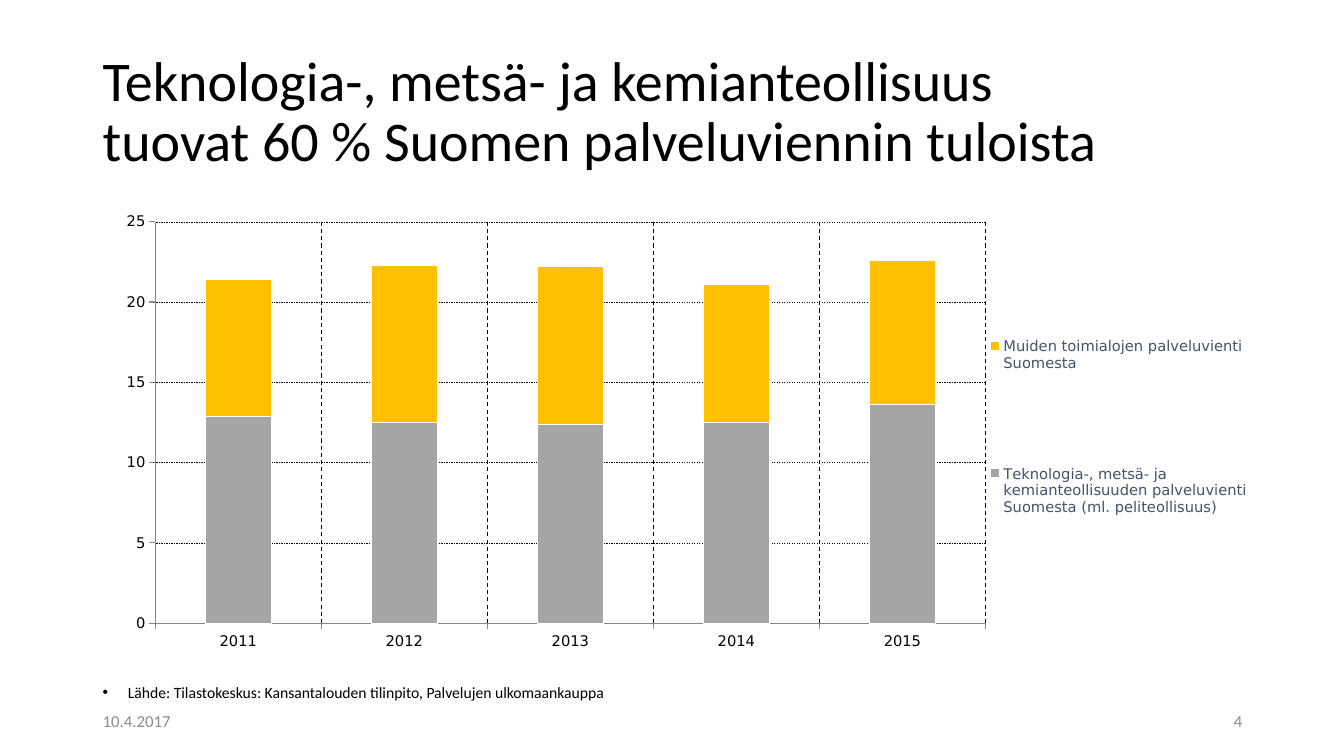
from dataclasses import dataclass

from lxml.etree import SubElement
from pptx import Presentation
from pptx.chart.data import CategoryChartData
from pptx.dml.color import RGBColor
from pptx.enum.chart import XL_CHART_TYPE as ChartType, XL_LEGEND_POSITION as LegendPos
from pptx.enum.chart import XL_TICK_MARK as Tick
from pptx.enum.dml import MSO_LINE
from pptx.enum.text import MSO_ANCHOR as Anchor, PP_ALIGN as Align
from pptx.oxml import parse_xml
from pptx.oxml.ns import nsdecls, qn
from pptx.util import Inches, Pt

TITLE = ["Teknologia-, metsä- ja kemianteollisuus",
         "tuovat 60 % Suomen palveluviennin tuloista"]
YEARS = ["2011", "2012", "2013", "2014", "2015"]
SERIES = [
    ("Teknologia-, metsä- ja kemianteollisuuden palveluvienti Suomesta (ml. peliteollisuus)",
     (12.9, 12.5, 12.4, 12.5, 13.6), "A5A5A5"),
    ("Muiden toimialojen palveluvienti Suomesta",
     (8.5, 9.8, 9.8, 8.6, 9), "FFC000"),
]
SOURCE = "Lähde: Tilastokeskus: Kansantalouden tilinpito, Palvelujen ulkomaankauppa"
DATE = "10.4.2017"
PAGE = "4"

# Fractions of the chart frame: left, top, width, height
PLOT_AREA = (0.054, 0.042, 0.716, 0.837)
LEGEND_AREA = (0.77, 0.09, 0.23, 0.76)

LEFT, WIDTH = 0.92, 11.5
FOOTER_TOP, FOOTER_W, FOOTER_H = 6.95, 3, 0.4


@dataclass(frozen=True)
class Theme:
    font: str = "Calibri"
    chart_font: str = "DejaVu Sans"
    text: str = "000000"
    footer: str = "8C8C8C"
    legend: str = "44546A"
    axis: str = "868686"
    bar_edge: str = "FFFFFF"
    title_pt: float = 40
    chart_pt: float = 10.5
    source_pt: float = 11.2
    footer_pt: float = 12


THEME = Theme()


def set_font(font, name, size, color):
    font.name = name
    font.size = Pt(size)
    font.color.rgb = RGBColor.from_string(color)


def add_text(slide, box, lines, size, color=THEME.text, anchor=Anchor.MIDDLE,
             align=Align.LEFT, spacing=1.0):
    """Add a one-paragraph text box whose lines are parted by line breaks."""
    tf = slide.shapes.add_textbox(*map(Inches, box)).text_frame
    tf.word_wrap = True
    tf.vertical_anchor = anchor
    p = tf.paragraphs[0]
    for i, line in enumerate(lines):
        if i:
            p.add_line_break()
        p.add_run().text = line
    p.alignment = align
    p.line_spacing = spacing
    set_font(p.font, THEME.font, size, color)
    return p


def add_bullet(p, indent):
    pPr = p._p.get_or_add_pPr()
    pPr.set("marL", str(Inches(indent)))
    pPr.set("indent", str(-Inches(indent)))
    bullet_font = parse_xml(f'<a:buFont {nsdecls("a")} typeface="Arial"/>')
    bullet = parse_xml(f'<a:buChar {nsdecls("a")} char="•"/>')
    at = 1 if pPr.find(qn("a:lnSpc")) is not None else 0
    pPr.insert(at, bullet_font)
    pPr.insert(at + 1, bullet)


def place(parent, index, area, inner=False):
    """Give a plot area or legend a fixed place within the chart frame."""
    for old in parent.findall(qn("c:layout")):
        parent.remove(old)
    layout = parse_xml(f'<c:layout {nsdecls("c")}/>')
    manual = SubElement(layout, qn("c:manualLayout"))
    settings = [("layoutTarget", "inner")] if inner else []
    settings += [("xMode", "edge"), ("yMode", "edge")]
    settings += zip("xywh", area)
    for tag, value in settings:
        SubElement(manual, qn(f"c:{tag}")).set("val", str(value))
    parent.insert(index, layout)


def style_axis(axis, grid_pt):
    axis.major_tick_mark = Tick.OUTSIDE
    axis.minor_tick_mark = Tick.NONE
    axis.has_major_gridlines = True
    grid = axis.major_gridlines.format.line
    grid.color.rgb = RGBColor.from_string(THEME.text)
    grid.width = Pt(grid_pt)
    grid.dash_style = MSO_LINE.DASH
    axis.format.line.color.rgb = RGBColor.from_string(THEME.axis)
    axis.format.line.width = Pt(0.75)
    set_font(axis.tick_labels.font, THEME.chart_font, THEME.chart_pt, THEME.text)


def add_service_export_chart(slide, box):
    data = CategoryChartData()
    data.categories = YEARS
    for name, values, _ in SERIES:
        data.add_series(name, values)
    chart = slide.shapes.add_chart(
        ChartType.COLUMN_STACKED, *map(Inches, box), data).chart
    chart.has_title = False
    set_font(chart.font, THEME.chart_font, THEME.chart_pt, THEME.text)

    plot = chart.plots[0]
    plot.gap_width, plot.overlap = 150, 100
    plot.vary_by_categories = False
    for s, (_, _, color) in zip(plot.series, SERIES):
        s.format.fill.solid()
        s.format.fill.fore_color.rgb = RGBColor.from_string(color)
        s.format.line.color.rgb = RGBColor.from_string(THEME.bar_edge)
        s.format.line.width = Pt(0.75)

    style_axis(chart.category_axis, 0.75)
    style_axis(chart.value_axis, 0.25)
    chart.value_axis.minimum_scale = 0
    chart.value_axis.maximum_scale = 25
    chart.value_axis.major_unit = 5

    chart.has_legend = True
    legend = chart.legend
    legend.position = LegendPos.RIGHT
    legend.include_in_layout = False
    set_font(legend.font, THEME.chart_font, THEME.chart_pt, THEME.legend)
    place(chart._chartSpace.chart.plotArea, 0, PLOT_AREA, inner=True)
    place(legend._element, 1, LEGEND_AREA)


def main():
    prs = Presentation()
    prs.slide_width, prs.slide_height = Inches(13.33), Inches(7.5)
    slide = prs.slides.add_slide(prs.slide_layouts[6])

    add_text(slide, (LEFT, 0.4, WIDTH, 1.45), TITLE, THEME.title_pt, spacing=0.9)
    add_service_export_chart(slide, (LEFT, 2, WIDTH, 4.76))
    source = add_text(slide, (LEFT, 6.78, 5.91, 0.24), [SOURCE], THEME.source_pt,
                      anchor=Anchor.TOP, spacing=0.7)
    add_bullet(source, 0.25)
    for left, text, align in ((LEFT, DATE, Align.LEFT),
                              (LEFT + WIDTH - FOOTER_W, PAGE, Align.RIGHT)):
        add_text(slide, (left, FOOTER_TOP, FOOTER_W, FOOTER_H), [text],
                 THEME.footer_pt, THEME.footer, align=align)

    prs.save("out.pptx")


if __name__ == "__main__":
    main()
